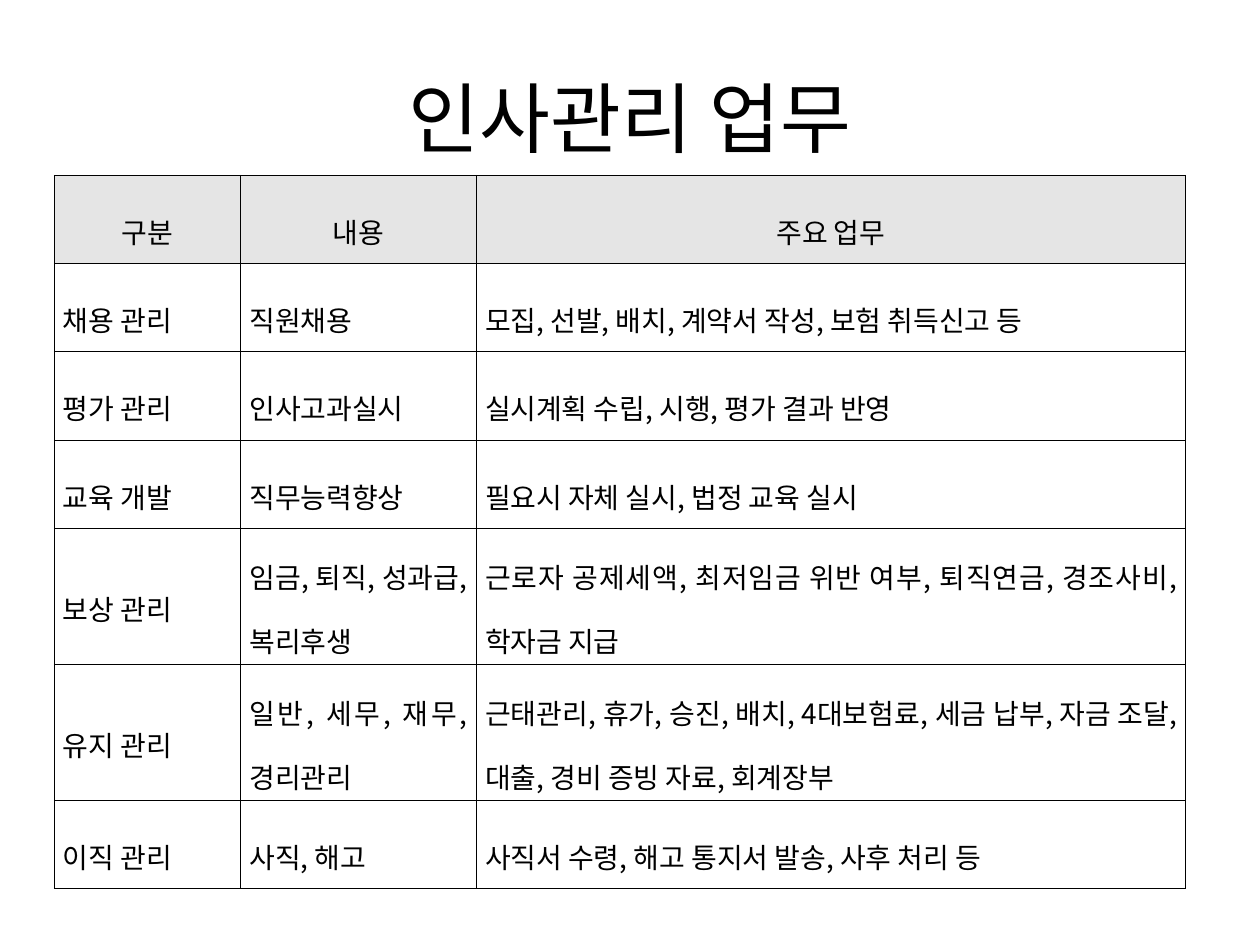
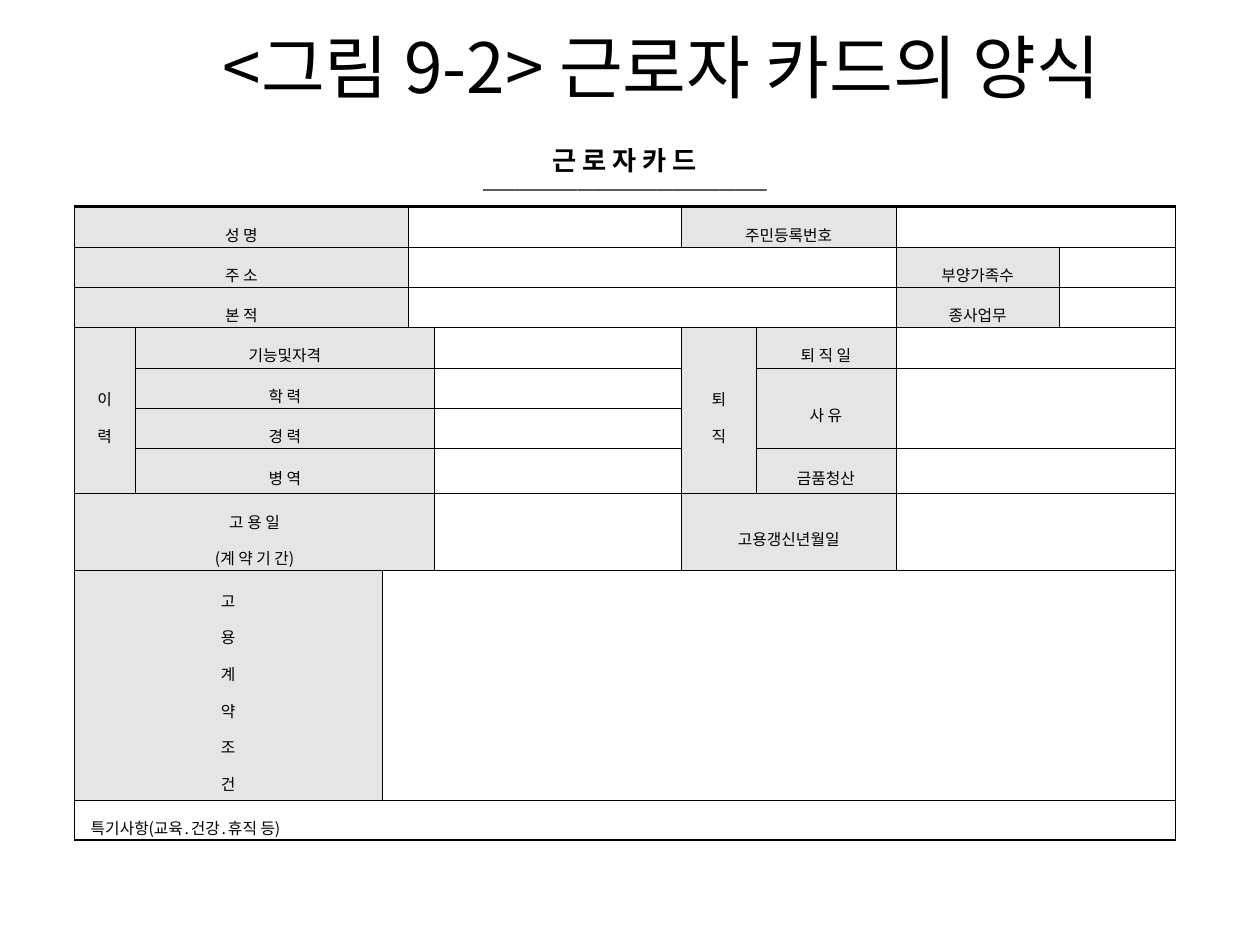
from lxml import etree
from pptx import Presentation
from pptx.dml.color import RGBColor
from pptx.enum import text
from pptx.oxml.ns import qn
from pptx.util import Emu, Inches, Pt

BLACK = RGBColor(0x00, 0x00, 0x00)
LABEL_GRAY = RGBColor(0xE5, 0xE5, 0xE5)
FONT = "Noto Sans CJK KR"
THIN, THICK = 0.28, 1.7
CENTER, JUSTIFY = text.PP_ALIGN.CENTER, text.PP_ALIGN.JUSTIFY
MIDDLE, TOP = text.MSO_ANCHOR.MIDDLE, text.MSO_ANCHOR.TOP

DUTY_COLUMNS = [1.48, 1.87, 5.63]
DUTY_ROWS = [0.7] * 4 + [1.08] * 2 + [0.7]
DUTIES = [
    ("구분", "내용", "주요 업무"),
    ("채용 관리", "직원채용", "모집, 선발, 배치, 계약서 작성, 보험 취득신고 등"),
    ("평가 관리", "인사고과실시", "실시계획 수립, 시행, 평가 결과 반영"),
    ("교육 개발", "직무능력향상", "필요시 자체 실시, 법정 교육 실시"),
    ("보상 관리", "임금, 퇴직, 성과급, 복리후생",
     "근로자 공제세액, 최저임금 위반 여부, 퇴직연금, 경조사비, 학자금 지급"),
    ("유지 관리", "일반, 세무, 재무, 경리관리",
     "근태관리, 휴가, 승진, 배치, 4대보험료, 세금 납부, 자금 조달, 대출, "
     "경비 증빙 자료, 회계장부"),
    ("이직 관리", "사직, 해고", "사직서 수령, 해고 통지서 발송, 사후 처리 등"),
]

CARD_COLUMNS = [0.48, 1.96, 0.21, 0.21, 1.96, 0.59, 1.11, 1.3, 0.92]
CARD_ROWS = [0.57] + [0.32] * 6 + [0.36, 0.61, 1.82, 0.32]
CARD_HEADING = "근 로 자 카 드\n" + "═" * 18
CARD_REMARKS = "특기사항(교육․건강․휴직 등)"
# row, column, row span, column span, label
CARD_LABELS = [
    (1, 0, 1, 3, "성 명"), (1, 5, 1, 2, "주민등록번호"),
    (2, 0, 1, 3, "주 소"), (2, 7, 1, 1, "부양가족수"),
    (3, 0, 1, 3, "본 적"), (3, 7, 1, 1, "종사업무"),
    (4, 0, 4, 1, "이\n력"), (4, 1, 1, 3, "기능및자격"),
    (5, 1, 1, 3, "학 력"), (6, 1, 1, 3, "경 력"), (7, 1, 1, 3, "병 역"),
    (4, 5, 4, 1, "퇴\n직"), (4, 6, 1, 1, "퇴 직 일"),
    (5, 6, 2, 1, "사 유"), (7, 6, 1, 1, "금품청산"),
    (8, 0, 1, 4, "고 용 일\n(계 약 기 간)"), (8, 5, 1, 2, "고용갱신년월일"),
    (9, 0, 1, 2, "\n".join("고용계약조건")),
]
# row, column, row span, column span
CARD_BLANKS = [
    (1, 3, 1, 2), (1, 7, 1, 2), (2, 3, 1, 4), (3, 3, 1, 4),
    (4, 7, 1, 2), (5, 7, 2, 2), (7, 7, 1, 2), (8, 7, 1, 2), (9, 2, 1, 7),
]


class Deck:
    def __init__(self):
        self.presentation = Presentation()
        self.presentation.slide_width = Inches(10)
        self.presentation.slide_height = Inches(7.5)
        self.slide = None

    def add_slide(self):
        self.slide = self.presentation.slides.add_slide(
            self.presentation.slide_layouts[6])

    def style(self, paragraph, size, align=CENTER, bold=False, spacing=None):
        paragraph.alignment = align
        if spacing:
            paragraph.line_spacing = spacing
        font = paragraph.font
        font.size, font.bold, font.name = Pt(size), bold, FONT
        font.color.rgb = BLACK
        defaults = paragraph._p.pPr.find(qn("a:defRPr"))
        etree.SubElement(defaults, qn("a:ea"), typeface=FONT)
        if not paragraph.runs:
            etree.SubElement(paragraph._p, qn("a:endParaRPr"), sz=str(size * 100))

    def title(self, words, size, width, bottom_inset=0.05):
        box = self.slide.shapes.add_textbox(
            Inches(0.5), Inches(0.3), Inches(width), Inches(1.25))
        frame = box.text_frame
        frame.word_wrap = True
        frame.vertical_anchor = MIDDLE
        frame.margin_bottom = Inches(bottom_inset)
        frame.text = words
        self.style(frame.paragraphs[0], size)

    def table(self, left, top, columns, rows):
        table = self.slide.shapes.add_table(
            len(rows), len(columns), Inches(left), Inches(top),
            Inches(sum(columns)), Inches(sum(rows))).table
        table.first_row = table.horz_banding = False
        for column, width in zip(table.columns, columns):
            column.width = Inches(width)
        for row, height in zip(table.rows, rows):
            row.height = Inches(height)
        return table

    def borders(self, cell, left=THIN, right=THIN, top=THIN, bottom=THIN):
        """Draw the four sides; a width of 0 hides a side."""
        properties = cell._tc.get_or_add_tcPr()
        for side, width in zip("LRTB", (left, right, top, bottom)):
            line = etree.SubElement(
                properties, qn("a:ln" + side), w=str(Pt(width)))
            if width:
                fill = etree.SubElement(line, qn("a:solidFill"))
                etree.SubElement(fill, qn("a:srgbClr"), val=str(BLACK))
            else:
                etree.SubElement(line, qn("a:noFill"))

    def cell(self, cell, words, size, inset, align=CENTER, shaded=False):
        cell.margin_left = cell.margin_right = Inches(inset)
        cell.margin_top = cell.margin_bottom = Inches(0.02)
        cell.vertical_anchor = MIDDLE
        if shaded:
            cell.fill.solid()
            cell.fill.fore_color.rgb = LABEL_GRAY
        else:
            cell.fill.background()
        cell.text_frame.text = words
        for paragraph in cell.text_frame.paragraphs:
            self.style(paragraph, size, align, spacing=1.6 if words else None)


def add_duties_slide(deck):
    deck.add_slide()
    deck.title("인사관리 업무", 44, 9)
    table = deck.table(0.43, 1.39, DUTY_COLUMNS, DUTY_ROWS)
    for row, duties in enumerate(DUTIES):
        header = row == 0
        for column, words in enumerate(duties):
            cell = table.cell(row, column)
            deck.borders(cell)
            deck.cell(cell, words, 16, 0.07, CENTER if header else JUSTIFY, header)


def add_card_slide(deck):
    deck.add_slide()
    deck.title("<그림 9-2> 근로자 카드의 양식", 39.6, 9.5, bottom_inset=0.85)
    table = deck.table(0.59, 1.07, CARD_COLUMNS, CARD_ROWS)
    last_row, last_column = len(CARD_ROWS) - 1, len(CARD_COLUMNS) - 1
    for row in range(last_row + 1):
        side = THIN if row else 0
        top = {0: 0, 1: THICK}.get(row, THIN)
        bottom = THICK if row in (0, last_row) else THIN
        for column in range(last_column + 1):
            cell = table.cell(row, column)
            deck.borders(cell, side, side, top, bottom)
            deck.cell(cell, "", 9, 0.06)

    def merged(row, column, row_span, column_span):
        cell = table.cell(row, column)
        if row_span * column_span > 1:
            cell.merge(table.cell(row + row_span - 1, column + column_span - 1))
        return cell

    for *area, words in CARD_LABELS:
        deck.cell(merged(*area), words, 9, 0.06, shaded=True)
    for area in CARD_BLANKS:
        merged(*area)

    heading = merged(0, 0, 1, last_column + 1)
    heading.text_frame.text = CARD_HEADING
    name, rule = heading.text_frame.paragraphs
    deck.style(name, 15, bold=True)
    deck.style(rule, 9)

    remarks = merged(last_row, 0, 1, last_column + 1)
    deck.cell(remarks, CARD_REMARKS, 9, 0.06, JUSTIFY)
    remarks.vertical_anchor = TOP
    indent = Emu(Inches(0.07))
    remarks.text_frame.paragraphs[0]._p.pPr.set("marL", str(indent))


def main():
    deck = Deck()
    add_duties_slide(deck)
    add_card_slide(deck)
    deck.presentation.save("out.pptx")


if __name__ == "__main__":
    main()
